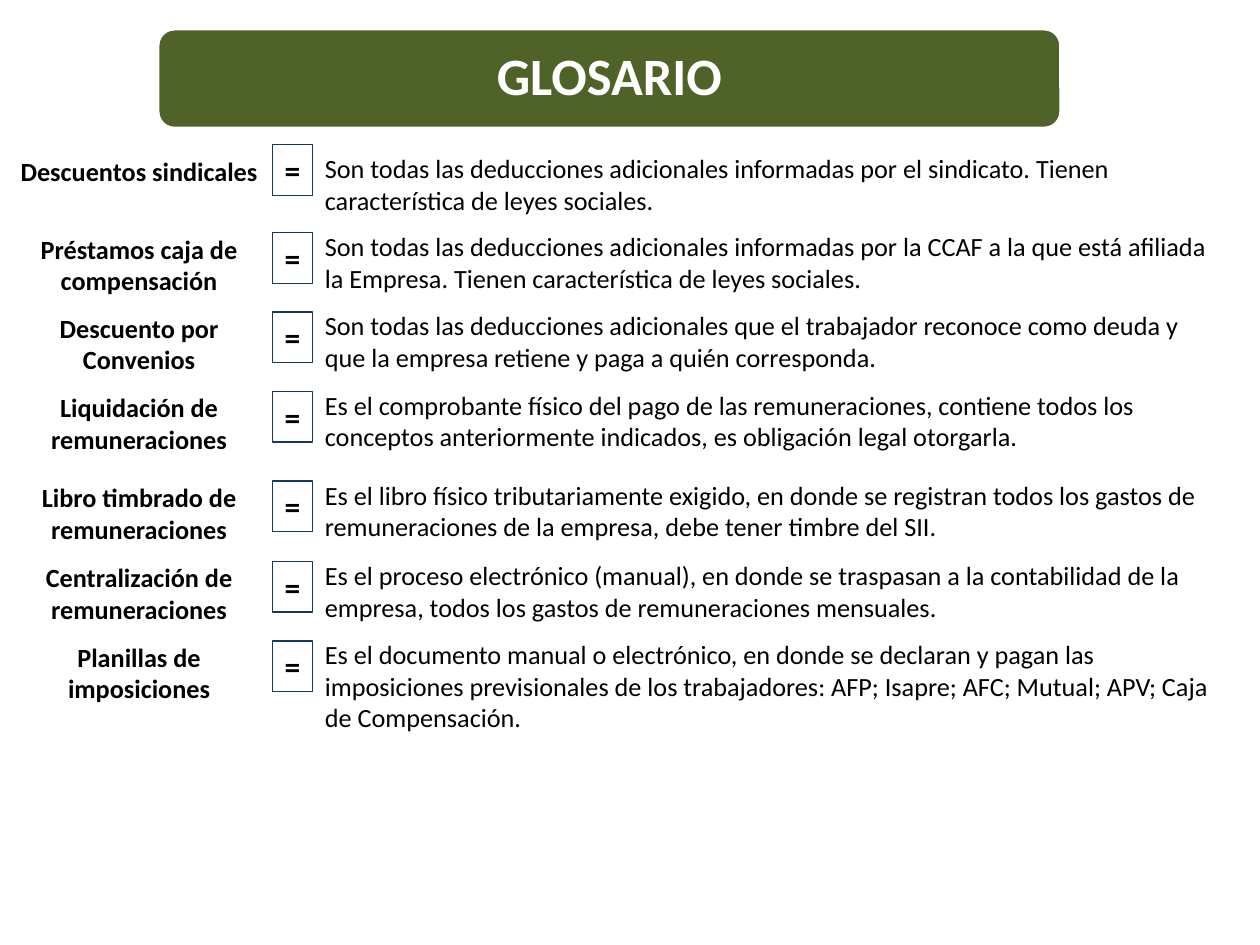
from pptx import Presentation
from pptx import util as u
from pptx.dml.color import RGBColor
from pptx.enum import shapes, text

GREEN = RGBColor(0x4F, 0x62, 0x28)
NAVY = RGBColor(0x17, 0x37, 0x5E)
WHITE = RGBColor(0xFF, 0xFF, 0xFF)
BLACK = RGBColor(0, 0, 0)
FONT = "Calibri"

LEFT, MID = text.PP_ALIGN.LEFT, text.PP_ALIGN.CENTER

# Column positions and widths, in cm
TERM = (0.1, 5.41)
SIGN = (5.49, 0.81)
MEANING = (6.3, 18.59)
LINE = 0.64  # height of one text line

# Top, sign offset, lines of term and of meaning, term, meaning
ROWS = [
    (2.95, -0.03, 1, 2, "Descuentos sindicales",
     "Son todas las deducciones adicionales informadas por el sindicato. "
     "Tienen característica de leyes sociales."),
    (4.52, 0.17, 2, 2, "Préstamos caja de compensación",
     "Son todas las deducciones adicionales informadas por la CCAF a la que "
     "está afiliada la Empresa. Tienen característica de leyes sociales."),
    (6.12, 0.17, 2, 2, "Descuento por Convenios",
     "Son todas las deducciones adicionales que el trabajador reconoce como "
     "deuda y que la empresa retiene y paga a quién corresponda."),
    (7.72, 0.17, 2, 2, "Liquidación de remuneraciones",
     "Es el comprobante físico del pago de las remuneraciones, contiene todos "
     "los conceptos anteriormente indicados, es obligación legal otorgarla."),
    (9.53, 0.17, 2, 2, "Libro timbrado de remuneraciones",
     "Es el libro físico tributariamente exigido, en donde se registran todos "
     "los gastos de remuneraciones de la empresa, debe tener timbre del SII."),
    (11.15, 0.17, 2, 2, "Centralización de remuneraciones",
     "Es el proceso electrónico (manual), en donde se traspasan a la "
     "contabilidad de la empresa, todos los gastos de remuneraciones mensuales."),
    (12.75, 0.17, 2, 3, "Planillas de imposiciones",
     "Es el documento manual o electrónico, en donde se declaran y pagan las "
     "imposiciones previsionales de los trabajadores: AFP; Isapre; AFC; Mutual; "
     "APV; Caja de Compensación."),
]


def cm(*nums):
    return [u.Cm(n) for n in nums]


def write(shape, words, size, bold=False, align=LEFT, color=BLACK,
          anchor=text.MSO_ANCHOR.TOP):
    frame = shape.text_frame
    frame.word_wrap = True
    frame.vertical_anchor = anchor
    frame.text = words
    para = frame.paragraphs[0]
    para.alignment = align
    font = para.font
    font.name, font.size, font.bold = FONT, u.Pt(size), bold
    font.color.rgb = color
    return frame


def add_title(slide, words):
    # Rounded bar, kept behind the title
    bar = slide.shapes.add_shape(shapes.MSO_SHAPE.ROUNDED_RECTANGLE,
                                 *cm(3.18, 0.58, 18.21, 2.01))
    bar.shadow.inherit = False
    bar.fill.solid()
    bar.fill.fore_color.rgb = GREEN
    bar.line.color.rgb = WHITE
    bar.line.width = u.Pt(2)

    title = slide.shapes.title
    title.element.addprevious(bar.element)
    title.left, title.top, title.width, title.height = cm(3.28, 0.68, 18.01, 1.81)
    frame = write(title, words, 30, True, MID, WHITE, text.MSO_ANCHOR.MIDDLE)
    frame.auto_size = text.MSO_AUTO_SIZE.NONE
    frame.paragraphs[0].line_spacing = 0.9


def add_label(slide, col, top, lines, words, **style):
    left, width = col
    box = slide.shapes.add_textbox(*cm(left, top, width, lines * LINE + 0.25))
    write(box, words, 15, **style)


def add_sign(slide, top):
    left, width = SIGN
    box = slide.shapes.add_shape(shapes.MSO_SHAPE.RECTANGLE,
                                 *cm(left, top, width, 1.02))
    box.shadow.inherit = False
    box.fill.background()
    box.line.color.rgb = NAVY
    box.line.width = u.Pt(0.75)
    write(box, "=", 18, bold=True)


def main():
    deck = Presentation()
    deck.slide_width, deck.slide_height = cm(25.4, 19.05)
    slide = deck.slides.add_slide(deck.slide_layouts[5])
    add_title(slide, "GLOSARIO")

    # Glossary entries
    for top, shift, few, many, term, meaning in ROWS:
        add_label(slide, TERM, top + 0.05, few, term, bold=True, align=MID)
        add_sign(slide, top + shift)
        add_label(slide, MEANING, top, many, meaning)

    deck.save("out.pptx")


if __name__ == "__main__":
    main()
